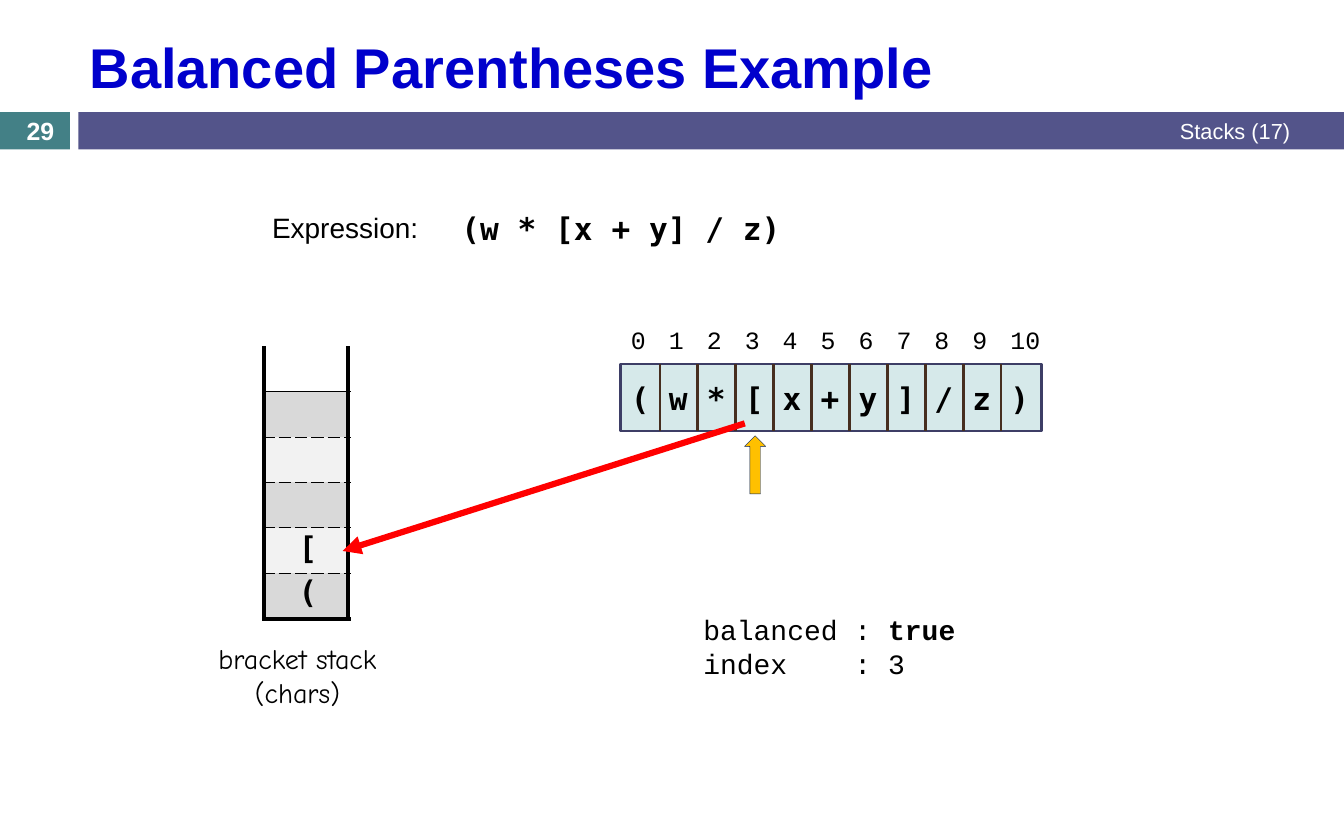
from dataclasses import dataclass

from lxml import etree
from pptx import Presentation
from pptx import util as u
from pptx.dml.color import RGBColor
from pptx.enum import shapes, text
from pptx.oxml import ns

COLORS = {
    "title": "0000CC", "black": "000000", "white": "FFFFFF",
    "teal": "438086", "purple": "53548A",
    "array": "D6E9EA", "array_edge": "3D3E66", "divider": "462E1F",
    "dark_slot": "D9D9D9", "light_slot": "F2F2F2",
    "push": "FF0000", "pointer": "FFC000", "pointer_edge": "002060",
}
STYLES = {
    "title": {"name": "Arial", "size": u.Pt(36), "bold": True},
    "header": {"name": "Arial", "size": u.Pt(14)},
    "number": {"name": "Arial", "size": u.Pt(16), "bold": True},
    "label": {"name": "Arial", "size": u.Pt(18)},
    "index": {"name": "Courier New", "size": u.Pt(16)},
    "state": {"name": "Courier New", "size": u.Pt(18)},
    "state_value": {"name": "Courier New", "size": u.Pt(18), "bold": True},
    "symbol": {"name": "DejaVu Sans Mono", "size": u.Pt(20), "bold": True},
    "caption": {"name": "Comic Neue", "size": u.Pt(18)},
}
LEFT, CENTER, RIGHT = text.PP_ALIGN.LEFT, text.PP_ALIGN.CENTER, text.PP_ALIGN.RIGHT
TOP, MIDDLE = text.MSO_ANCHOR.TOP, text.MSO_ANCHOR.MIDDLE

SYMBOLS = "(w*[x+y]/z)"
CELL = 24.4
ARRAY_LEFT, ARRAY_TOP, ARRAY_WIDTH, ARRAY_HEIGHT = 398.9, 234, 270.7, 43.2
FIRST_DIVIDER = 424.1
STACK_LEFT, STACK_TOP, STACK_WIDTH, SLOT_HEIGHT = 170, 222.5, 54, 29.16
SLOTS = ["white", "dark_slot", "light_slot", "dark_slot", "light_slot", "dark_slot"]


@dataclass
class Box:
    left: float
    top: float
    width: float
    height: float

    def lengths(self) -> list:
        return [u.Pt(value) for value in (self.left, self.top, self.width, self.height)]


@dataclass
class Label:
    box: Box
    lines: list
    style: str
    color: str = "black"
    align: int = LEFT
    anchor: int = TOP


def rgb(name: str) -> RGBColor:
    return RGBColor.from_string(COLORS[name])


def add_run(paragraph, words: str, style: str, color: str) -> None:
    run = paragraph.add_run()
    run.text = words
    for attribute, value in STYLES[style].items():
        setattr(run.font, attribute, value)
    run.font.color.rgb = rgb(color)


def add_label(slide, label: Label) -> None:
    frame = slide.shapes.add_textbox(*label.box.lengths()).text_frame
    frame.word_wrap = True
    frame.vertical_anchor = label.anchor
    for position, line in enumerate(label.lines):
        paragraph = frame.add_paragraph() if position else frame.paragraphs[0]
        paragraph.alignment = label.align
        runs = [(line, label.style)] if isinstance(line, str) else line
        for words, style in runs:
            add_run(paragraph, words, style, label.color)


def add_block(slide, kind: int, box: Box, fill: str, edge: str = "", weight: float = 0):
    shape = slide.shapes.add_shape(kind, *box.lengths())
    shape.shadow.inherit = False
    shape.fill.solid()
    shape.fill.fore_color.rgb = rgb(fill)
    if edge:
        shape.line.color.rgb = rgb(edge)
        shape.line.width = u.Pt(weight)
    else:
        shape.line.fill.background()
    return shape


def add_line(slide, start: tuple, end: tuple, color: str, weight: float, arrow: bool = False) -> None:
    points = [u.Pt(value) for value in start + end]
    connector = slide.shapes.add_connector(shapes.MSO_CONNECTOR.STRAIGHT, *points)
    connector.line.color.rgb = rgb(color)
    connector.line.width = u.Pt(weight)
    if arrow:
        etree.SubElement(connector.line._get_or_add_ln(), ns.qn("a:tailEnd"), type="triangle")
    etree.SubElement(connector._element.spPr, ns.qn("a:effectLst"))


def set_border(cell, position: int, side: str, weight: float, dash: str = "solid") -> None:
    border = etree.Element(ns.qn(f"a:ln{side}"), w=str(u.Pt(weight)))
    if weight:
        fill = etree.SubElement(border, ns.qn("a:solidFill"))
        etree.SubElement(fill, ns.qn("a:srgbClr"), val=COLORS["black"])
        etree.SubElement(border, ns.qn("a:prstDash"), val=dash)
    else:
        etree.SubElement(border, ns.qn("a:noFill"))
    cell._tc.get_or_add_tcPr().insert(position, border)


def add_stack(slide) -> None:
    box = Box(STACK_LEFT, STACK_TOP, STACK_WIDTH, SLOT_HEIGHT * len(SLOTS))
    table = slide.shapes.add_table(len(SLOTS), 1, *box.lengths()).table
    table.first_row = table.horz_banding = False
    last = len(SLOTS) - 1
    dashed, solid = (0.5, "lgDash"), (0.5, "solid")
    edges = [(0, "solid"), solid] + [dashed] * (last - 1) + [(3, "solid")]
    for row, color in enumerate(SLOTS):
        cell = table.cell(row, 0)
        cell.fill.solid()
        cell.fill.fore_color.rgb = rgb(color)
        borders = {"L": (3,), "R": (3,), "T": edges[row], "B": edges[row + 1]}
        for position, (side, border) in enumerate(borders.items()):
            set_border(cell, position, side, *border)


def add_array(slide) -> None:
    box = Box(ARRAY_LEFT, ARRAY_TOP, ARRAY_WIDTH, ARRAY_HEIGHT)
    add_block(slide, shapes.MSO_SHAPE.RECTANGLE, box, "array", "array_edge", 1.5)
    for index, symbol in enumerate(SYMBOLS):
        left = ARRAY_LEFT + index * CELL - 0.4
        width = 36.7 if index == len(SYMBOLS) - 1 else 24.5
        if index:
            x = FIRST_DIVIDER + (index - 1) * CELL
            add_line(slide, (x, ARRAY_TOP), (x, ARRAY_TOP + ARRAY_HEIGHT), "divider", 1.5)
        add_label(slide, Label(Box(left, 205.2, width, 26.6), [str(index)], "index"))
        add_label(slide, Label(Box(left, 240.5, width, 31.7), [symbol], "symbol"))


def add_title(slide, words: str) -> None:
    title = slide.shapes.title
    box = Box(50.4, 13.7, 785.5, 57.6)
    for attribute, value in zip(("left", "top", "width", "height"), box.lengths()):
        setattr(title, attribute, value)
    title.text_frame.vertical_anchor = MIDDLE
    paragraph = title.text_frame.paragraphs[0]
    paragraph.alignment = LEFT
    add_run(paragraph, words, "title", "title")


def main() -> None:
    presentation = Presentation()
    presentation.slide_width, presentation.slide_height = u.Pt(864), u.Pt(540)
    slide = presentation.slides.add_slide(presentation.slide_layouts[5])

    add_title(slide, "Balanced Parentheses Example")
    add_block(slide, shapes.MSO_SHAPE.RECTANGLE, Box(0, 72, 45, 24), "teal")
    add_block(slide, shapes.MSO_SHAPE.RECTANGLE, Box(50.4, 72, 813.6, 24), "purple")
    add_stack(slide)
    add_array(slide)

    labels = [
        Label(Box(444.2, 72, 392.4, 24), ["Stacks (17)"], "header", "white", RIGHT, MIDDLE),
        Label(Box(0, 73, 51.8, 21.6), ["29"], "number", "white", CENTER, MIDDLE),
        Label(Box(167.8, 131.8, 144, 28.8), ["Expression:"], "label"),
        Label(Box(289.6, 131.2, 256.3, 31.7), ["(w * [x + y] / z)"], "symbol"),
        Label(Box(445, 390.2, 234, 51.1),
              [[("balanced : ", "state"), ("true", "state_value")], "index    : 3"], "state"),
        Label(Box(185, 336.2, 24.5, 31.7), ["["], "symbol"),
        Label(Box(185, 364.5, 24.5, 31.7), ["("], "symbol"),
        Label(Box(124.6, 409, 133.2, 51.1), ["bracket stack", "(chars)"], "caption", align=CENTER),
    ]
    for label in labels:
        add_label(slide, label)

    add_line(slide, (478.8, 272.2), (220.3, 354.2), "push", 4, arrow=True)
    pointer = add_block(slide, shapes.MSO_SHAPE.DOWN_ARROW, Box(478.6, 280.1, 13.7, 37.4),
                        "pointer", "pointer_edge", 0.25)
    pointer.rotation = 180
    presentation.save("out.pptx")


if __name__ == "__main__":
    main()
